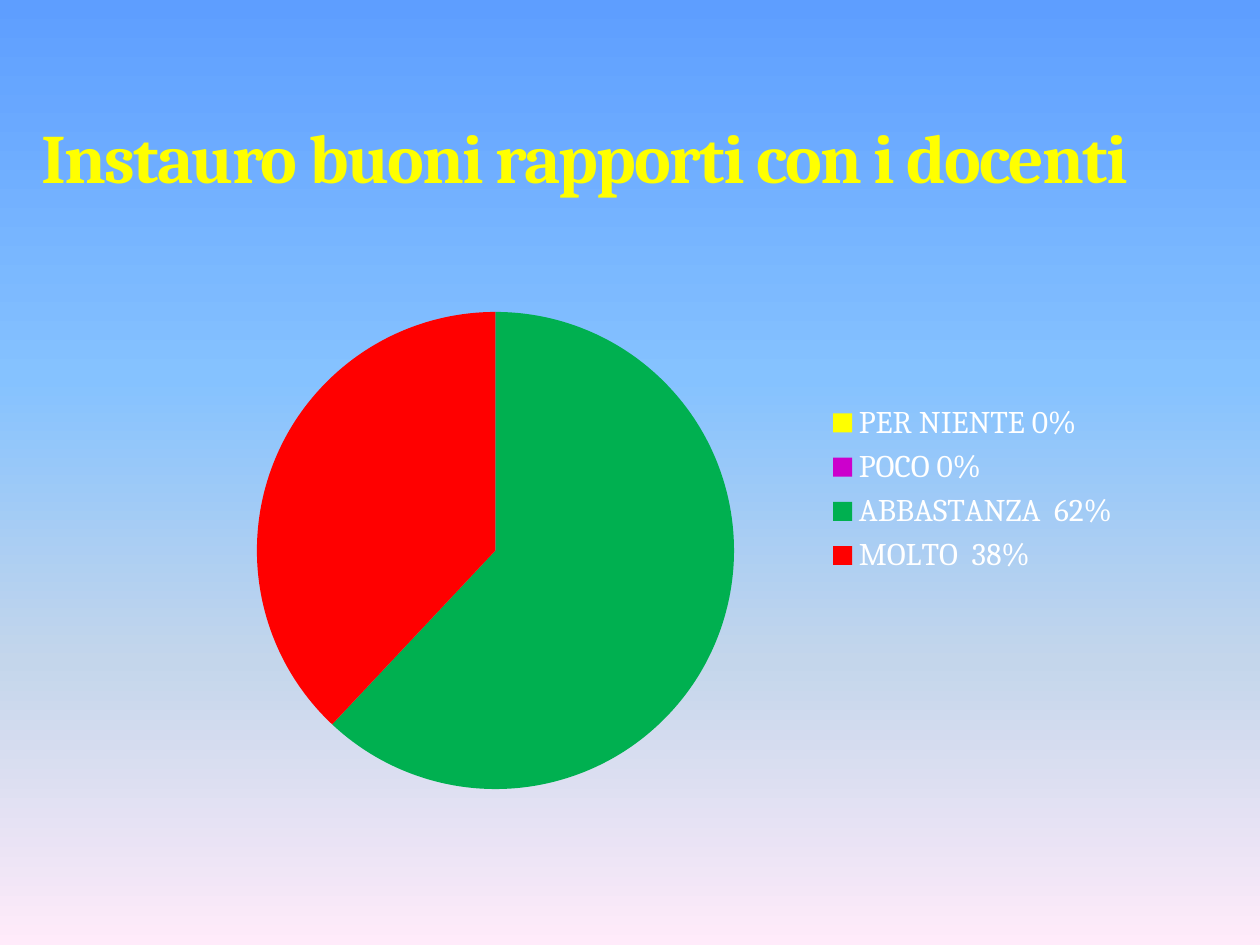
import pptx
import pptx.chart.data
import pptx.dml.color
import pptx.enum.chart
import pptx.enum.text
import pptx.oxml
import pptx.oxml.ns
import pptx.util
from pptx.util import Inches

FONT = "Cambria"
SKY = [(0, "5E9EFF"), (40, "85C2FF"), (70, "C4D6EB"), (100, "FFEBFA")]
ANSWERS = [
    ("PER NIENTE 0%", 0, "FFFF00"),
    ("POCO 0%", 0, "CC00CC"),
    ("ABBASTANZA  62%", 62, "00B050"),
    ("MOLTO  38%", 38, "FF0000"),
]


def color(value):
    return pptx.dml.color.RGBColor.from_string(value)


def xml(prefix, markup):
    tag, rest = markup.split(" ", 1)
    return pptx.oxml.parse_xml(f"<{tag} {pptx.oxml.ns.nsdecls(prefix)} {rest}")


def paint_background(slide):
    fill = slide.background.fill
    fill.gradient()
    fill.gradient_angle = 270
    stops = "".join(
        f'<a:gs pos="{percent * 1000}"><a:srgbClr val="{shade}"/></a:gs>'
        for percent, shade in SKY
    )
    background = slide.background._cSld.bg
    old_stops = background.find(".//" + pptx.oxml.ns.qn("a:gsLst"))
    old_stops.getparent().replace(old_stops, xml("a", f"a:gsLst >{stops}</a:gsLst>"))


def place_title(slide, left, top, width, height):
    title = slide.shapes.title
    title.left, title.top, title.width, title.height = left, top, width, height
    frame = title.text_frame
    frame.text = "Instauro buoni rapporti con i docenti"
    frame.word_wrap = True
    frame.auto_size = pptx.enum.text.MSO_AUTO_SIZE.NONE
    frame.vertical_anchor = pptx.enum.text.MSO_ANCHOR.BOTTOM
    frame.margin_bottom = Inches(0.62)
    heading = frame.paragraphs[0]
    heading.alignment = pptx.enum.text.PP_ALIGN.LEFT
    run = heading.runs[0]
    run.font.name = FONT
    run.font.size = pptx.util.Pt(39.6)
    run.font.bold = True
    run.font.color.rgb = color("FFFF00")
    properties = run._r.get_or_add_rPr()
    properties.set("spc", "-100")
    properties.insert(0, xml("a", (
        'a:ln w="3175"><a:solidFill><a:srgbClr val="9C3888">'
        '<a:alpha val="25000"/></a:srgbClr></a:solidFill></a:ln>'
    )))


def manual_layout(x, y, w, h, inner=False):
    target = '<c:layoutTarget val="inner"/>' if inner else ""
    modes = '<c:xMode val="edge"/><c:yMode val="edge"/>'
    sizes = "".join(
        f'<c:{name} val="{value}"/>' for name, value in zip("xywh", (x, y, w, h))
    )
    return xml("c", f"c:layout ><c:manualLayout>{target}{modes}{sizes}</c:manualLayout></c:layout>")


def place_answers_pie(slide, left, top, width, height):
    answers = pptx.chart.data.CategoryChartData()
    answers.categories = [label for label, _, _ in ANSWERS]
    answers.add_series("Series 1", [share for _, share, _ in ANSWERS])
    chart = slide.shapes.add_chart(
        pptx.enum.chart.XL_CHART_TYPE.PIE, left, top, width, height, answers
    ).chart
    chart.has_title = False
    chart.font.name = FONT
    chart.font.size = pptx.util.Pt(18)
    chart.font.color.rgb = color("FFFFFF")

    pie = chart.plots[0]
    pie.vary_by_categories = True
    for index, (_, _, shade) in enumerate(ANSWERS):
        slice_format = pie.series[0].points[index].format
        slice_format.fill.solid()
        slice_format.fill.fore_color.rgb = color(shade)
        slice_format.line.fill.background()

    chart.has_legend = True
    legend = chart.legend
    legend.position = pptx.enum.chart.XL_LEGEND_POSITION.RIGHT
    legend.include_in_layout = True
    plot_area = chart._chartSpace.chart.plotArea
    for layout in plot_area.findall(pptx.oxml.ns.qn("c:layout")):
        plot_area.remove(layout)
    plot_area.insert(0, manual_layout(0.1, 0.03, 0.48, 0.94, inner=True))
    legend_element = legend._element
    for layout in legend_element.findall(pptx.oxml.ns.qn("c:layout")):
        legend_element.remove(layout)
    position = legend_element.find(pptx.oxml.ns.qn("c:legendPos"))
    position.addnext(manual_layout(0.66, 0.2, 0.32, 0.36))


def main():
    presentation = pptx.Presentation()
    presentation.slide_width = Inches(10)
    presentation.slide_height = Inches(7.5)
    slide = presentation.slides.add_slide(presentation.slide_layouts[5])
    paint_background(slide)
    place_title(slide, Inches(0.23), Inches(0.17), Inches(9.53), Inches(2.02))
    place_answers_pie(slide, Inches(1.25), Inches(2.34), Inches(7.89), Inches(4.06))
    presentation.save("out.pptx")


if __name__ == "__main__":
    main()
